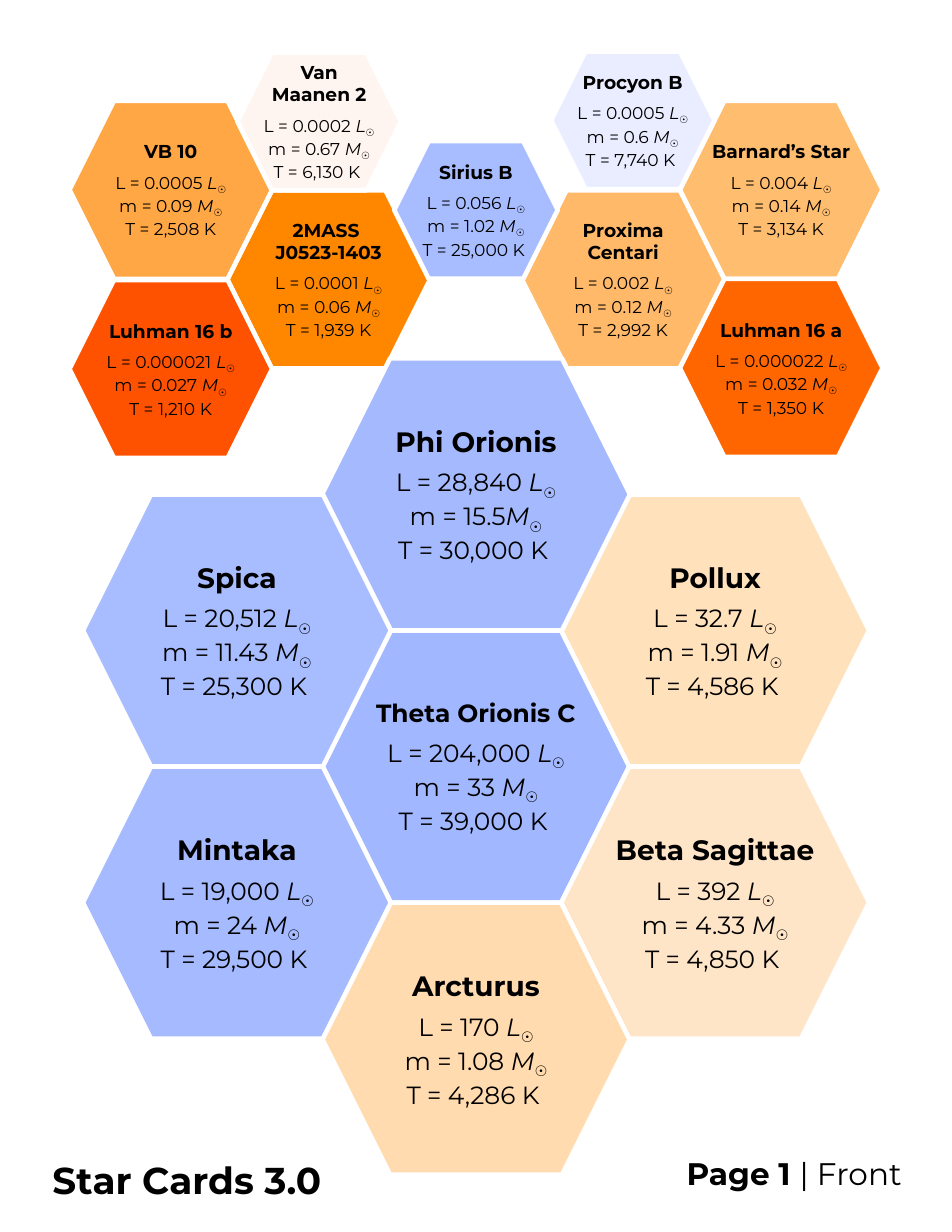
from pptx import Presentation
from pptx.dml.color import RGBColor
from pptx.enum.shapes import MSO_SHAPE
from pptx.enum.text import MSO_ANCHOR, MSO_AUTO_SIZE, PP_ALIGN
from pptx.util import Inches, Pt

HEXAGON = MSO_SHAPE.HEXAGON
MIDDLE = MSO_ANCHOR.MIDDLE
FIT_SHAPE = MSO_AUTO_SIZE.SHAPE_TO_FIT_TEXT
LEFT, CENTER, RIGHT = PP_ALIGN.LEFT, PP_ALIGN.CENTER, PP_ALIGN.RIGHT

# Width, height, name size, value size, size of the space that ends the card
SMALL = (1.46, 1.23, 12, 11, 10.5)
MEDIUM = (1.81, 1.59, 12, 11, None)
LARGE = (2.75, 2.43, 18, 16, 14)

# Left, top, colour, name lines, luminosity, mass, temperature
SMALL_STARS = [
    (3.52, 1.26, "A8BDFF", ["Sirius B"], "0.056", "1.02 ", "25,000"),
    (2.12, 0.47, "FFF5F0", ["Van Maanen 2"], "0.0002", "0.67 ", "6,130"),
    (4.92, 0.46, "EAEDFF", ["Procyon B"], "0.0005", "0.6 ", "7,740"),
]
MEDIUM_STARS = [
    (2.03, 1.7, "FF8700", ["2MASS ", "J0523-1403"], "0.0001", "0.06 ", "1,939"),
    (4.66, 1.7, "FFB969", ["Proxima Centari"], "0.002", "0.12 ", "2,992"),
    (0.62, 0.9, "FFA645", ["VB 10"], "0.0005", "0.09 ", "2,508"),
    (6.07, 0.9, "FFBD6F", ["Barnard’s Star"], "0.004", "0.14 ", "3,134"),
    (6.07, 2.49, "FF6600", ["Luhman 16 a"], "0.000022", "0.032 ", "1,350"),
    (0.62, 2.5, "FF5200", ["Luhman 16 b"], "0.000021", "0.027 ", "1,210"),
]
# Column and half-row in the honeycomb, then as above
LARGE_STARS = [
    (1, 2, "A1B7FF", ["Theta Orionis C"], "204,000", "33 ", "39,000"),
    (1, 4, "FFDBAF", ["Arcturus"], "170", "1.08 ", "4,286"),
    (0, 3, "A5BAFF", ["Mintaka"], "19,000", "24 ", "29,500"),
    (2, 1, "FFE1BC", ["Pollux"], "32.7", "1.91 ", "4,586"),
    (1, 0, "A5BAFE", ["Phi Orionis"], "28,840", "15.5", "30,000"),
    (2, 3, "FFE5C8", ["Beta Sagittae"], "392", "4.33 ", "4,850"),
    (0, 1, "A8BDFF", ["Spica"], "20,512", "11.43 ", "25,300"),
]
COMB_LEFT, COMB_TOP = 0.74, 3.2
COLUMN_STEP, HALF_ROW = 2.135, LARGE[1] / 2
NARROW_NAMES = {"Theta Orionis C": 16}


def color(hex_value):
    return RGBColor.from_string(hex_value)


class StarPage:
    font = "Montserrat"
    ink = "000000"
    border = "FFFFFF"

    def __init__(self, slide):
        self.slide = slide

    def run(self, paragraph, text, size, **styles):
        run = paragraph.add_run()
        run.text = text
        run.font.color.rgb = color(self.ink)
        formats = {"name": self.font, "size": Pt(size), "bold": False, **styles}
        for attribute, value in formats.items():
            setattr(run.font, attribute, value)
        return run

    def lines(self, frame, count, align):
        """Return the frame's paragraphs after growing it to count of them."""
        while len(frame.paragraphs) < count:
            frame.add_paragraph()
        for paragraph in frame.paragraphs:
            paragraph.alignment = align
        return frame.paragraphs

    def solar_value(self, paragraph, value, unit, size):
        """Write a value followed by its unit with a lowered sun sign."""
        self.run(paragraph, value, size)
        self.run(paragraph, unit, size, italic=True)
        sun = self.run(paragraph, "☉", size, italic=True)
        sun._r.get_or_add_rPr().set("baseline", "-25000")

    def card(self, kind, left, top, fill, names, luminosity, mass, temperature):
        width, height, name_size, size, end_size = kind
        hexagon = self.slide.shapes.add_shape(
            HEXAGON, Inches(left), Inches(top), Inches(width), Inches(height))
        hexagon.shadow.inherit = False
        hexagon.fill.solid()
        hexagon.fill.fore_color.rgb = color(fill)
        hexagon.line.color.rgb = color(self.border)
        hexagon.line.width = Pt(3)
        frame = hexagon.text_frame
        margins = dict.fromkeys(
            ("margin_left", "margin_top", "margin_right", "margin_bottom"), 0)
        for attribute, value in {"vertical_anchor": MIDDLE, **margins}.items():
            setattr(frame, attribute, value)

        *name_lines, light, weight, heat = self.lines(
            frame, len(names) + 3, CENTER)
        for paragraph, name in zip(name_lines, names):
            self.run(paragraph, name, NARROW_NAMES.get(name, name_size), bold=True)
        name_lines[-1].space_after = Pt(6)
        self.solar_value(light, f"L = {luminosity} ", "L", size)
        self.solar_value(weight, f"m = {mass}", "M", size)
        self.run(heat, f"T = {temperature} K", size)
        if end_size:
            self.run(heat, " ", end_size)

    def label(self, left, top, width, height, size, bold_text, text="", align=LEFT):
        box = self.slide.shapes.add_textbox(
            Inches(left), Inches(top), Inches(width), Inches(height))
        frame = box.text_frame
        frame.word_wrap = False
        frame.auto_size = FIT_SHAPE
        paragraph = self.lines(frame, 1, align)[0]
        self.run(paragraph, bold_text, size, bold=True)
        if text:
            self.run(paragraph, text, size)


def main():
    deck = Presentation()
    deck.slide_width, deck.slide_height = Inches(8.5), Inches(11)
    page = StarPage(deck.slides.add_slide(deck.slide_layouts[6]))

    for star in MEDIUM_STARS:
        page.card(MEDIUM, *star)
    for column, half_row, *star in LARGE_STARS:
        page.card(LARGE, COMB_LEFT + column * COLUMN_STEP,
                  COMB_TOP + half_row * HALF_ROW, *star)
    for star in SMALL_STARS:
        page.card(SMALL, *star)

    page.label(0.37, 10.28, 2.63, 0.5, 24, "Star Cards 3.0")
    page.label(6, 10.26, 2.15, 0.44, 20, "Page 1 ", "| Front", RIGHT)
    deck.save("out.pptx")


if __name__ == "__main__":
    main()
